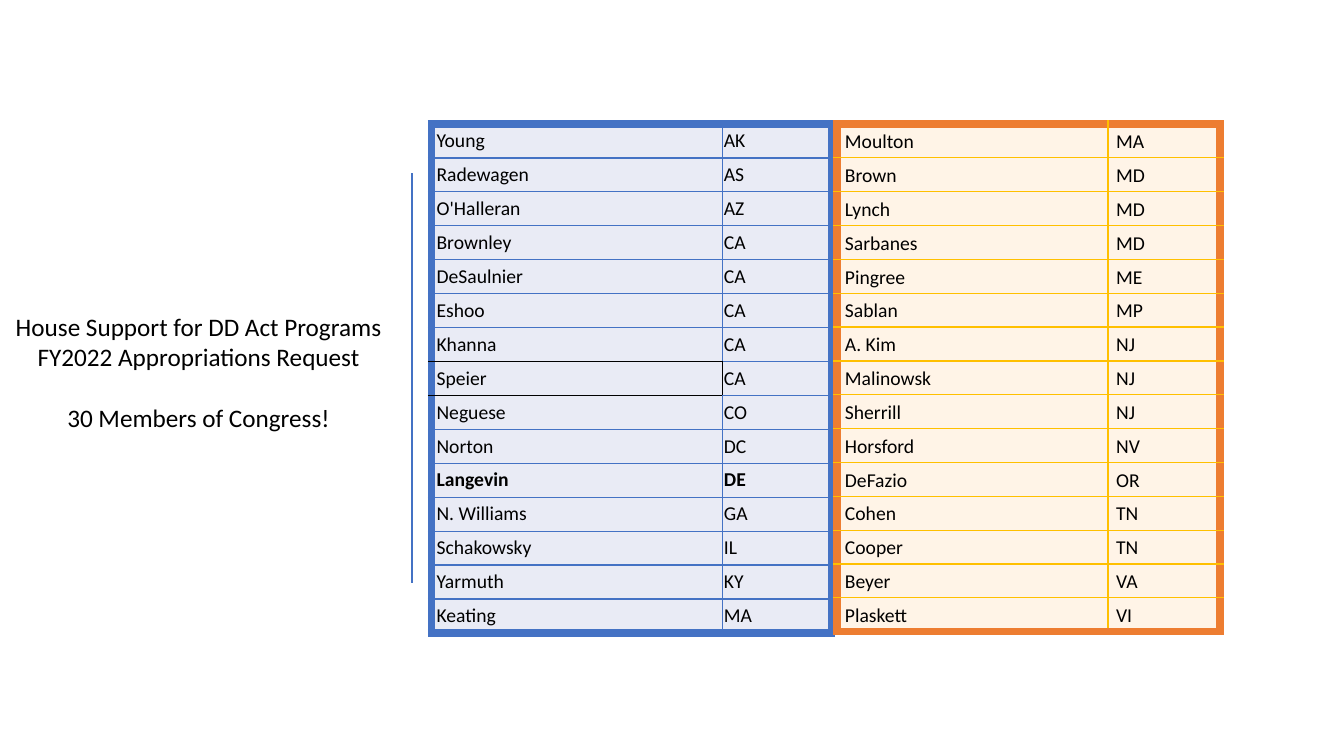
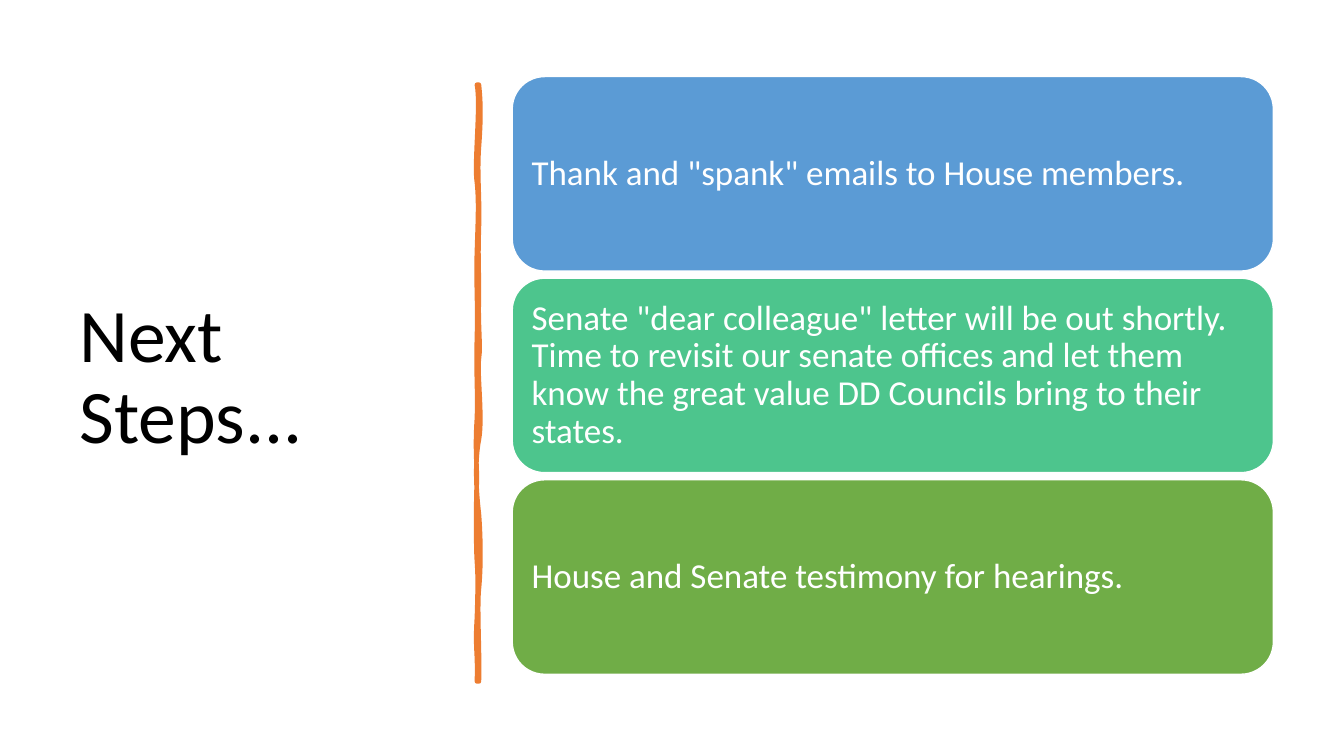
"""Build two slides: House support for DD Act programs, and the next steps."""
from lxml import etree
from pptx import Presentation
from pptx import util as u
from pptx.dml.color import RGBColor
from pptx.enum import shapes, text
from pptx.oxml import ns

FONT = "Calibri"
BLACK = RGBColor(0x00, 0x00, 0x00)
WHITE = RGBColor(0xFF, 0xFF, 0xFF)
BLUE = RGBColor(0x44, 0x72, 0xC4)
PALE_BLUE = RGBColor(0xE9, 0xEB, 0xF5)
ORANGE = RGBColor(0xED, 0x7D, 0x31)
PALE_ORANGE = RGBColor(0xFF, 0xF4, 0xE7)
GOLD = RGBColor(0xFF, 0xC0, 0x00)
SKY = RGBColor(0x5B, 0x9B, 0xD5)
MINT = RGBColor(0x4D, 0xC5, 0x8D)
GREEN = RGBColor(0x70, 0xAD, 0x47)

FIRST_MEMBERS = [
    ("Young", "AK"), ("Radewagen", "AS"), ("O'Halleran", "AZ"),
    ("Brownley", "CA"), ("DeSaulnier", "CA"), ("Eshoo", "CA"),
    ("Khanna", "CA"), ("Speier", "CA"), ("Neguese", "CO"),
    ("Norton", "DC"), ("Langevin", "DE"), ("N. Williams", "GA"),
    ("Schakowsky", "IL"), ("Yarmuth", "KY"), ("Keating", "MA"),
]
SECOND_MEMBERS = [
    ("Moulton", "MA"), ("Brown", "MD"), ("Lynch", "MD"),
    ("Sarbanes", "MD"), ("Pingree", "ME"), ("Sablan", "MP"),
    ("A. Kim", "NJ"), ("Malinowsk", "NJ"), ("Sherrill", "NJ"),
    ("Horsford", "NV"), ("DeFazio", "OR"), ("Cohen", "TN"),
    ("Cooper", "TN"), ("Beyer", "VA"), ("Plaskett", "VI"),
]
SPEIER_EDGES = {(7, 0, "T"), (7, 0, "B"), (7, 0, "R"),
                (6, 0, "B"), (8, 0, "T"), (7, 1, "L")}

STEPS = [
    ("Thank and \"spank\" emails to House members.", SKY),
    ("Senate \"dear colleague\" letter will be out shortly. Time to revisit "
     "our senate offices and let them know the great value DD Councils bring "
     "to their states.", MINT),
    ("House and Senate testimony for hearings.", GREEN),
]

STROKE_START = (4.75, 0.84)
STROKE_CURVES = [
    ((4.77, 1.02), (4.77, 1.19), (4.75, 1.46)),
    ((4.73, 1.73), (4.76, 1.95), (4.75, 2.26)),
    ((4.74, 2.57), (4.75, 2.62), (4.75, 2.94)),
    ((4.74, 3.25), (4.77, 3.42), (4.75, 3.56)),
    ((4.73, 3.70), (4.79, 4.14), (4.75, 4.36)),
    ((4.71, 4.57), (4.72, 4.84), (4.75, 5.10)),
    ((4.77, 5.36), (4.77, 5.64), (4.75, 5.84)),
    ((4.73, 6.03), (4.76, 6.50), (4.75, 6.76)),
    ((4.74, 6.76), (4.73, 6.76), (4.73, 6.76)),
    ((4.74, 6.46), (4.71, 6.44), (4.73, 6.13)),
    ((4.74, 5.83), (4.74, 5.70), (4.73, 5.57)),
    ((4.72, 5.44), (4.72, 4.95), (4.73, 4.77)),
    ((4.73, 4.59), (4.71, 4.45), (4.73, 4.15)),
    ((4.74, 3.86), (4.72, 3.73), (4.73, 3.35)),
    ((4.74, 2.98), (4.72, 2.81), (4.73, 2.50)),
    ((4.74, 2.18), (4.75, 2.00), (4.73, 1.81)),
    ((4.70, 1.63), (4.77, 1.04), (4.73, 0.84)),
]


def add_run(paragraph, words, size, color, bold=False):
    """Add one formatted run to a paragraph."""
    run = paragraph.add_run()
    run.text = words
    run.font.name = FONT
    run.font.size = u.Pt(size)
    run.font.bold = bold
    run.font.color.rgb = color


def set_title(slide, box, lines, size, align, anchor):
    """Move the title placeholder and fill it, one paragraph a line."""
    title = slide.shapes.title
    title.left, title.top, title.width, title.height = map(u.Inches, box)
    frame = title.text_frame
    frame.word_wrap = True
    frame.auto_size = text.MSO_AUTO_SIZE.NONE
    frame.vertical_anchor = anchor
    for index, line in enumerate(lines):
        paragraph = frame.add_paragraph() if index else frame.paragraphs[0]
        paragraph.alignment = align
        add_run(paragraph, line, size, BLACK)
    return frame


def add_rule(slide, x, top, bottom):
    """Draw a vertical blue rule."""
    rule = slide.shapes.add_connector(
        shapes.MSO_CONNECTOR.STRAIGHT,
        u.Inches(x), u.Inches(top), u.Inches(x), u.Inches(bottom))
    rule.line.color.rgb = BLUE
    rule.line.width = u.Pt(1.5)
    etree.SubElement(rule._element.spPr, ns.qn("a:effectLst"))


def set_border(cell, side, color, width):
    """Set one border of a cell."""
    properties = cell._tc.get_or_add_tcPr()
    line = etree.SubElement(properties, ns.qn(f"a:ln{side}"), w=str(u.Pt(width)))
    fill = etree.SubElement(line, ns.qn("a:solidFill"))
    etree.SubElement(fill, ns.qn("a:srgbClr"), val=str(color))


def add_member_table(slide, box, columns, members, fill, frame, grid, insets,
                     bold_name=None, black_edges=()):
    """Add a table of members and states with a thick outer frame."""
    table = slide.shapes.add_table(
        len(members), len(columns), *map(u.Inches, box)).table
    table.first_row = table.horz_banding = False
    for column, width in zip(table.columns, columns):
        column.width = u.Inches(width)
    for row, member in enumerate(members):
        for col, words in enumerate(member):
            cell = table.cell(row, col)
            outer = {"L": col == 0, "R": col == len(columns) - 1,
                     "T": row == 0, "B": row == len(members) - 1}
            for side, is_outer in outer.items():
                inner = BLACK if (row, col, side) in black_edges else grid
                set_border(cell, side, frame if is_outer else inner,
                           6 if is_outer else 1)
            cell.fill.solid()
            cell.fill.fore_color.rgb = fill
            cell.vertical_anchor = text.MSO_ANCHOR.BOTTOM
            left, top, bottom = insets[col]
            cell.margin_left = cell.margin_right = u.Inches(left)
            cell.margin_top, cell.margin_bottom = u.Inches(top), u.Inches(bottom)
            add_run(cell.text_frame.paragraphs[0], words, 14, BLACK,
                    member[0] == bold_name)


def bend_segments(freeform):
    """Turn each three line segments of a freeform into one cubic curve."""
    segments = list(freeform._element.iter(ns.qn("a:lnTo")))
    for start in range(0, len(segments), 3):
        curve = etree.Element(ns.qn("a:cubicBezTo"))
        segments[start].addprevious(curve)
        for segment in segments[start:start + 3]:
            curve.append(segment[0])
            segment.getparent().remove(segment)


def add_brush_stroke(slide):
    """Draw the wavy orange stroke."""
    builder = slide.shapes.build_freeform(*map(u.Inches, STROKE_START))
    builder.add_line_segments(
        [(u.Inches(x), u.Inches(y)) for curve in STROKE_CURVES for x, y in curve])
    stroke = builder.convert_to_shape()
    bend_segments(stroke)
    stroke.shadow.inherit = False
    stroke.fill.solid()
    stroke.fill.fore_color.rgb = ORANGE
    stroke.line.color.rgb = ORANGE
    stroke.line.width = u.Pt(3.25)


def add_step(slide, top, words, color):
    """Add a rounded card holding one step."""
    card = slide.shapes.add_shape(
        shapes.MSO_SHAPE.ROUNDED_RECTANGLE,
        u.Inches(5.08), u.Inches(top), u.Inches(7.55), u.Inches(1.93))
    card.shadow.inherit = False
    card.fill.solid()
    card.fill.fore_color.rgb = color
    card.line.color.rgb = WHITE
    card.line.width = u.Pt(1)
    frame = card.text_frame
    frame.word_wrap = True
    frame.vertical_anchor = text.MSO_ANCHOR.MIDDLE
    frame.margin_left = frame.margin_right = u.Inches(0.1)
    frame.margin_top = frame.margin_bottom = u.Inches(0.1)
    paragraph = frame.paragraphs[0]
    paragraph.alignment = text.PP_ALIGN.LEFT
    paragraph.line_spacing = 0.9
    add_run(paragraph, words, 25, WHITE)


def build_support_slide(slide):
    """Build the slide listing the supporting members."""
    frame = set_title(
        slide, (-0.04, 3.04, 4.02, 1.31),
        ["House Support for DD Act Programs FY2022 Appropriations Request",
         "30 Members of Congress!"],
        18, text.PP_ALIGN.CENTER, text.MSO_ANCHOR.TOP)
    frame.paragraphs[1].space_before = u.Pt(22)
    add_rule(slide, 4.09, 1.72, 5.78)
    add_member_table(
        slide, (4.28, 1.23, 3.97, 5.05), (2.89, 1.08), FIRST_MEMBERS,
        PALE_BLUE, BLUE, BLUE, [(0.05, 0.01, 0.05), (0.01, 0.01, 0.05)],
        "Langevin", SPEIER_EDGES)
    add_member_table(
        slide, (8.3, 1.23, 3.8, 5.04), (2.69, 1.11), SECOND_MEMBERS,
        PALE_ORANGE, ORANGE, GOLD, [(0.08, 0.04, 0.04)] * 2)


def build_steps_slide(slide):
    """Build the slide of next steps."""
    frame = set_title(
        slide, (0.69, 0.7, 3.74, 6.11), ["Next Steps..."],
        54, text.PP_ALIGN.LEFT, text.MSO_ANCHOR.MIDDLE)
    frame.paragraphs[0].line_spacing = 0.9
    add_brush_stroke(slide)
    for index, (words, color) in enumerate(STEPS):
        add_step(slide, 0.76 + 2 * index, words, color)


def main():
    """Build and save the presentation."""
    presentation = Presentation()
    presentation.slide_width = u.Inches(13.33)
    presentation.slide_height = u.Inches(7.5)
    title_only = presentation.slide_layouts[5]
    for build in (build_support_slide, build_steps_slide):
        build(presentation.slides.add_slide(title_only))
    presentation.save("out.pptx")


if __name__ == "__main__":
    main()
